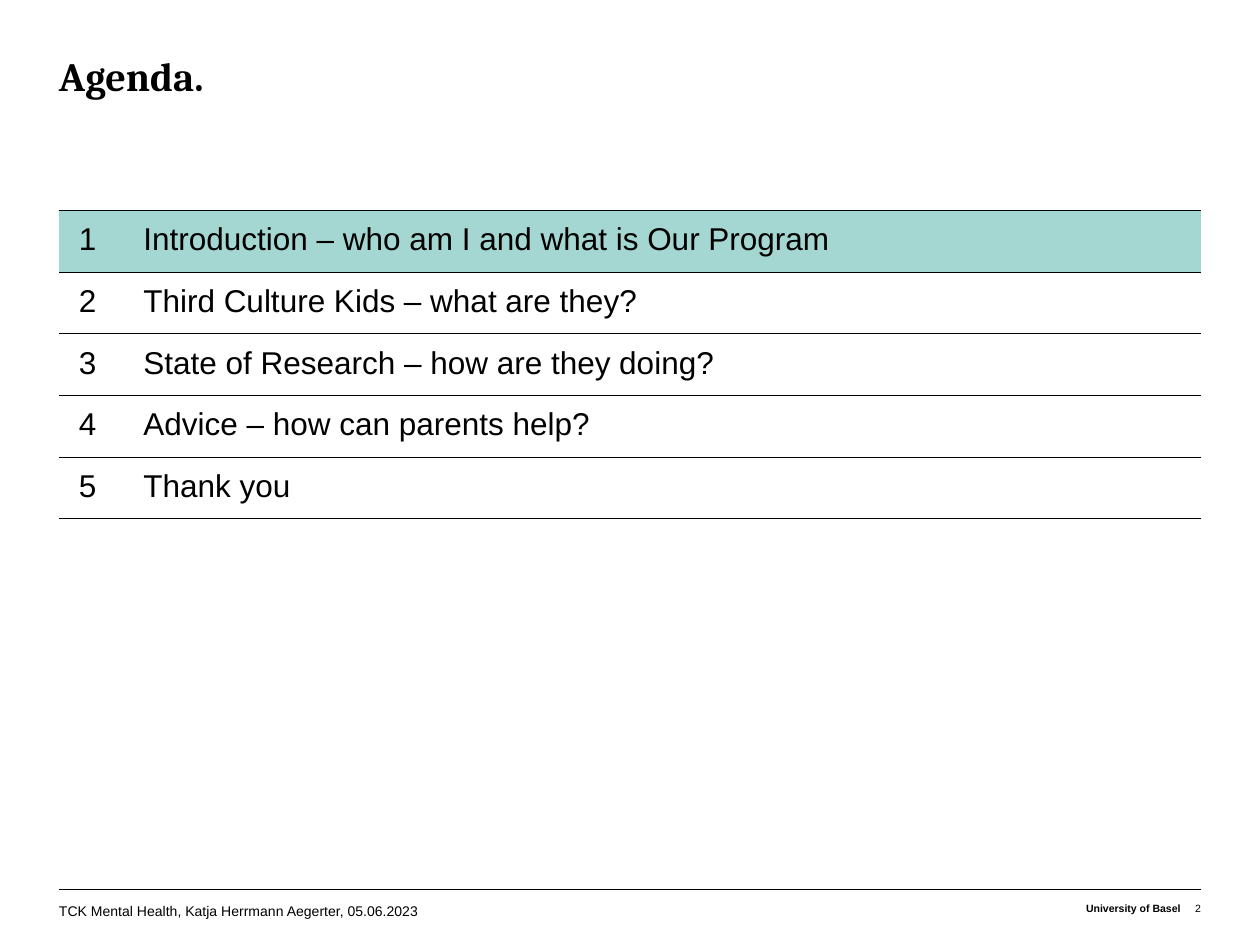
from lxml.etree import SubElement
from pptx import Presentation
from pptx.dml.color import RGBColor
from pptx.enum.shapes import MSO_CONNECTOR
from pptx.enum.text import PP_ALIGN
from pptx.oxml.ns import qn
from pptx.util import Cm, Pt


def color(value):
    return RGBColor.from_string(value)


def format_text(paragraph, size, font="Arial", bold=False):
    for run in paragraph.runs:
        run.font.name = font
        run.font.size = Pt(size)
        run.font.bold = bold
        run.font.color.rgb = color(BLACK)


BLACK = "000000"
MINT = "A5D7D2"
LEFT = 1.19
WIDTH = 23.02
RIGHT = LEFT + WIDTH
ROW_HEIGHT = 1.21
NUMBER_WIDTH = 1.3

agenda = [
    "Introduction – who am I and what is Our Program",
    "Third Culture Kids – what are they?",
    "State of Research – how are they doing?",
    "Advice – how can parents help?",
    "Thank you",
]

presentation = Presentation()
presentation.slide_width = Cm(25.4)
presentation.slide_height = Cm(19.05)
slide = presentation.slides.add_slide(presentation.slide_layouts[6])

footer_line = slide.shapes.add_connector(
    MSO_CONNECTOR.STRAIGHT, Cm(LEFT), Cm(17.93), Cm(RIGHT), Cm(17.93)
)
footer_line.line.color.rgb = color(BLACK)
footer_line.line.width = Pt(0.25)
SubElement(footer_line._element.spPr, qn("a:effectLst"))

texts = [
    ("Agenda.", LEFT, 1.12, WIDTH, 2.1, 0, 23, "Cambria", True, PP_ALIGN.LEFT),
    ("TCK Mental Health, Katja Herrmann Aegerter, 05.06.2023",
     LEFT, 18.14, 7.9, 0.5, 0.05, 8, "Arial", False, PP_ALIGN.LEFT),
    ("University of Basel", 18.5, 18.14, 5.3, 0.5, 0.05, 6, "Arial", True, PP_ALIGN.RIGHT),
    ("2", 23.8, 18.14, RIGHT - 23.8, 0.5, 0.05, 6, "Arial", False, PP_ALIGN.RIGHT),
]
for text, left, top, width, height, inset, size, font, bold, alignment in texts:
    shape = slide.shapes.add_textbox(Cm(left), Cm(top), Cm(width), Cm(height))
    text_frame = shape.text_frame
    text_frame.word_wrap = True
    text_frame.margin_left = text_frame.margin_right = text_frame.margin_bottom = 0
    text_frame.margin_top = Cm(inset)
    text_frame.text = text
    paragraph = text_frame.paragraphs[0]
    paragraph.alignment = alignment
    format_text(paragraph, size, font, bold)
    if font == "Cambria":
        paragraph.line_spacing = Pt(25)

table = slide.shapes.add_table(
    len(agenda), 2, Cm(LEFT), Cm(4.24), Cm(WIDTH), Cm(ROW_HEIGHT * len(agenda))
).table
table.first_row = False
table.horz_banding = False
table.columns[0].width = Cm(NUMBER_WIDTH)
table.columns[1].width = Cm(WIDTH - NUMBER_WIDTH)

for row, topic in enumerate(agenda):
    table.rows[row].height = Cm(ROW_HEIGHT)
    for column, text in enumerate((str(row + 1), topic)):
        cell = table.cell(row, column)
        cell.margin_left = cell.margin_right = Cm(0.4)
        cell.margin_top = cell.margin_bottom = Cm(0.24)
        cell.text_frame.text = text
        format_text(cell.text_frame.paragraphs[0], 18)
        properties = cell._tc.get_or_add_tcPr()
        for side in ("lnL", "lnR"):
            SubElement(SubElement(properties, qn(f"a:{side}")), qn("a:noFill"))
        for side in ("lnT", "lnB"):
            border = SubElement(properties, qn(f"a:{side}"), w=str(Pt(0.5)))
            SubElement(SubElement(border, qn("a:solidFill")), qn("a:srgbClr"), val=BLACK)
        if row == 0:
            cell.fill.solid()
            cell.fill.fore_color.rgb = color(MINT)
        else:
            cell.fill.background()

presentation.save("out.pptx")
